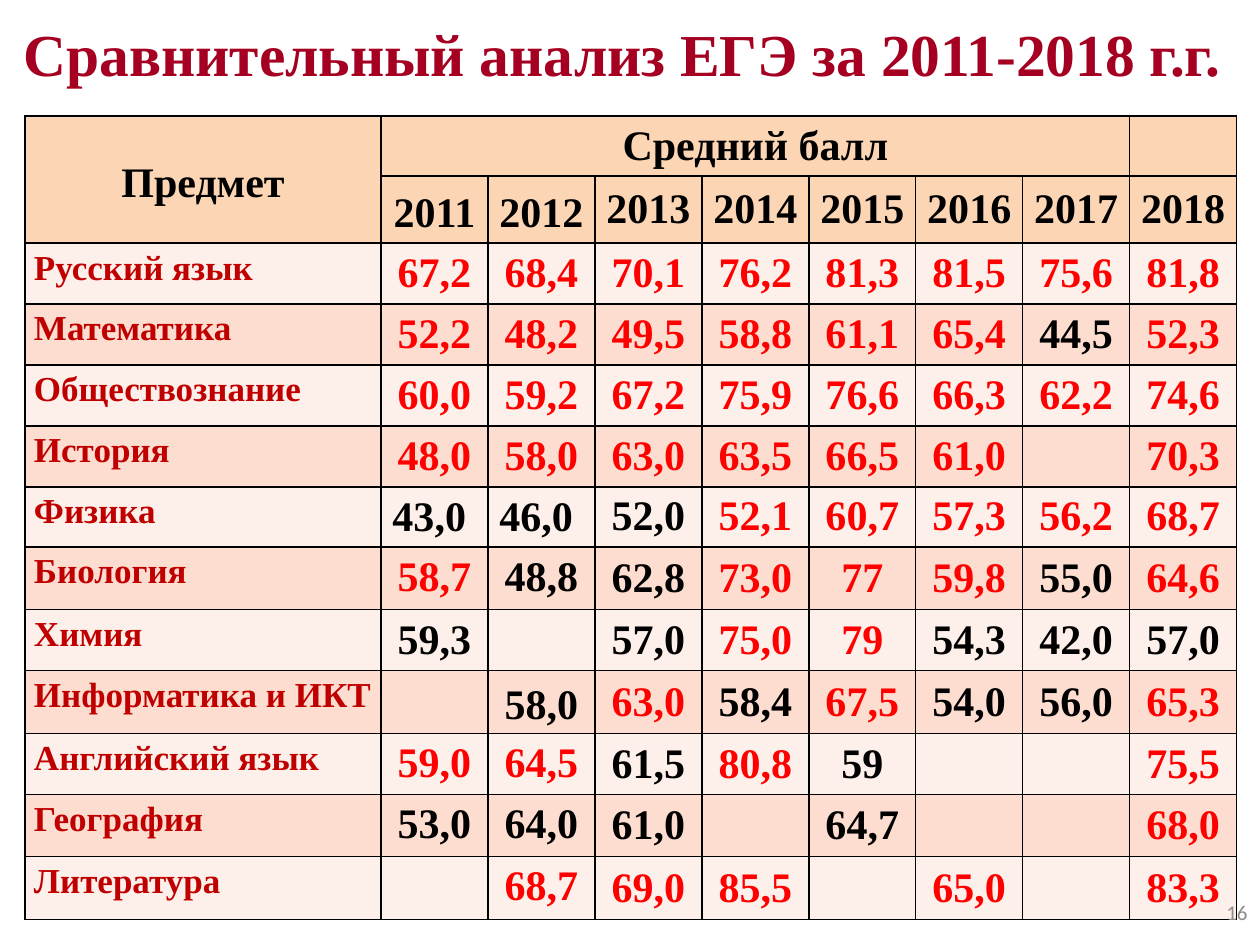
from lxml import etree
from pptx import Presentation
from pptx.dml.color import RGBColor
from pptx.enum.text import MSO_ANCHOR, MSO_AUTO_SIZE, PP_ALIGN
from pptx.oxml.ns import qn
from pptx.util import Emu, Pt

TOP, MIDDLE = MSO_ANCHOR.TOP, MSO_ANCHOR.MIDDLE
LEFT, CENTER, RIGHT = PP_ALIGN.LEFT, PP_ALIGN.CENTER, PP_ALIGN.RIGHT
NO_AUTOFIT = MSO_AUTO_SIZE.NONE

EMU_PER_PX = 914400 // 126
SERIF = "Times New Roman"
WHITE = RGBColor(0xFF, 0xFF, 0xFF)
BLACK = RGBColor(0, 0, 0)
RED = RGBColor(0xFF, 0, 0)
CRIMSON = RGBColor(0xA5, 0, 0x21)
DARK_RED = RGBColor(0xC0, 0, 0)
GRAY = RGBColor(0x8C, 0x8C, 0x8C)
HEADER_FILL = RGBColor(0xFC, 0xD5, 0xB5)
BAND_FILLS = (RGBColor(0xFD, 0xEF, 0xE9), RGBColor(0xFC, 0xDD, 0xCF))

YEARS = range(2011, 2019)
SUBJECT_WIDTH, YEAR_WIDTH = 356, 107
ROW_HEIGHTS = (60, 67, 61, 61, 61, 61, 60, 63, 61, 63, 61, 62, 63)
LOOSE_SPACING = 1.15

# Subject, scores by year, years whose score is black
RESULTS = (
    ("Русский язык", "67,2|68,4|70,1|76,2|81,3|81,5|75,6|81,8", ()),
    ("Математика", "52,2|48,2|49,5|58,8|61,1|65,4|44,5|52,3", (2017,)),
    ("Обществознание", "60,0|59,2|67,2|75,9|76,6|66,3|62,2|74,6", ()),
    ("История", "48,0|58,0|63,0|63,5|66,5|61,0||70,3", ()),
    ("Физика", "43,0 |46,0 |52,0|52,1|60,7|57,3|56,2|68,7", (2011, 2012, 2013)),
    ("Биология", "58,7|48,8|62,8|73,0|77|59,8|55,0|64,6", (2012, 2013, 2017)),
    ("Химия", "59,3||57,0|75,0|79|54,3|42,0|57,0", (2011, 2013, 2016, 2017, 2018)),
    ("Информатика и ИКТ", "|58,0|63,0|58,4|67,5|54,0|56,0|65,3", (2012, 2014, 2016, 2017)),
    ("Английский язык", "59,0|64,5|61,5|80,8|59|||75,5", (2013, 2015)),
    ("География", "53,0|64,0|61,0||64,7|||68,0", (2011, 2012, 2013, 2015)),
    ("Литература", "|68,7|69,0|85,5||65,0||83,3", ()),
)


def px(length):
    return Emu(length * EMU_PER_PX)


def place(shape, left, top, width, height):
    shape.left, shape.top = px(left), px(top)
    shape.width, shape.height = px(width), px(height)


def write(text_frame, text, size, color, font=SERIF, bold=True, align=CENTER, spacing=None):
    paragraph = text_frame.paragraphs[0]
    paragraph.text = text
    paragraph.alignment = align
    paragraph.line_spacing = spacing
    paragraph.font.size = Pt(size)
    paragraph.font.name = font
    paragraph.font.bold = bold
    paragraph.font.color.rgb = color


def add_borders(cell):
    properties = cell._tc.get_or_add_tcPr()
    for index, side in enumerate(("lnL", "lnR", "lnT", "lnB")):
        line = etree.Element(qn(f"a:{side}"), w=str(Pt(1)))
        fill = etree.SubElement(line, qn("a:solidFill"))
        etree.SubElement(fill, qn("a:srgbClr"), val=str(BLACK))
        properties.insert(index, line)


def format_cell(cell, color):
    cell.fill.solid()
    cell.fill.fore_color.rgb = color
    cell.margin_left = cell.margin_right = px(9)
    cell.margin_top = cell.margin_bottom = 0
    add_borders(cell)


def write_cell(cell, text, color, size=24, anchor=MIDDLE, align=CENTER, spacing=None):
    cell.vertical_anchor = anchor
    write(cell.text_frame, text, size, color, align=align, spacing=spacing)


def add_title(slide, text):
    title = slide.shapes.title
    place(title, 0, 0, 1260, 106)
    title.fill.solid()
    title.fill.fore_color.rgb = WHITE
    title.text_frame.auto_size = NO_AUTOFIT
    title.text_frame.vertical_anchor = MIDDLE
    write(title.text_frame, text, 34, CRIMSON)


def fill_header(table):
    table.cell(0, 0).merge(table.cell(1, 0))
    table.cell(0, 1).merge(table.cell(0, len(YEARS) - 1))
    write_cell(table.cell(0, 0), "Предмет", BLACK, spacing=LOOSE_SPACING)
    write_cell(table.cell(0, 1), "Средний балл", BLACK, anchor=TOP, spacing=LOOSE_SPACING)
    for column, year in enumerate(YEARS, 1):
        spacing = LOOSE_SPACING if year < 2013 else None
        write_cell(table.cell(1, column), str(year), BLACK, spacing=spacing)


def fill_results(table):
    for row, (subject, scores, black_years) in enumerate(RESULTS, 2):
        write_cell(table.cell(row, 0), subject, DARK_RED, 20, TOP, LEFT, LOOSE_SPACING)
        for column, (year, score) in enumerate(zip(YEARS, scores.split("|")), 1):
            if not score:
                continue
            early = year < 2013
            centered = not early or subject == "Информатика и ИКТ"
            write_cell(table.cell(row, column), score,
                       BLACK if year in black_years else RED,
                       anchor=MIDDLE if centered else TOP,
                       spacing=LOOSE_SPACING if early else None)


def add_score_table(slide):
    widths = [SUBJECT_WIDTH] + [YEAR_WIDTH] * len(YEARS)
    frame = slide.shapes.add_table(len(ROW_HEIGHTS), len(widths), px(25), px(116),
                                   px(sum(widths)), px(sum(ROW_HEIGHTS)))
    table = frame.table
    table.first_row = table.horz_banding = False
    for column, width in zip(table.columns, widths):
        column.width = px(width)
    for index, (row, height) in enumerate(zip(table.rows, ROW_HEIGHTS)):
        row.height = px(height)
        for cell in row.cells:
            format_cell(cell, HEADER_FILL if index < 2 else BAND_FILLS[index % 2])
    fill_header(table)
    fill_results(table)


def add_page_number(slide, number):
    box = slide.shapes.add_textbox(0, 0, 0, 0)
    place(box, 1210, 880, 50, 65)
    box.text_frame.word_wrap = True
    box.text_frame.vertical_anchor = MIDDLE
    write(box.text_frame, number, 12, GRAY, font="Calibri", bold=False, align=RIGHT)


def main():
    presentation = Presentation()
    presentation.slide_width, presentation.slide_height = px(1260), px(945)
    slide = presentation.slides.add_slide(presentation.slide_layouts[5])
    add_title(slide, "Сравнительный анализ ЕГЭ за 2011-2018 г.г. ")
    add_score_table(slide)
    add_page_number(slide, "16")
    presentation.save("out.pptx")


if __name__ == "__main__":
    main()
